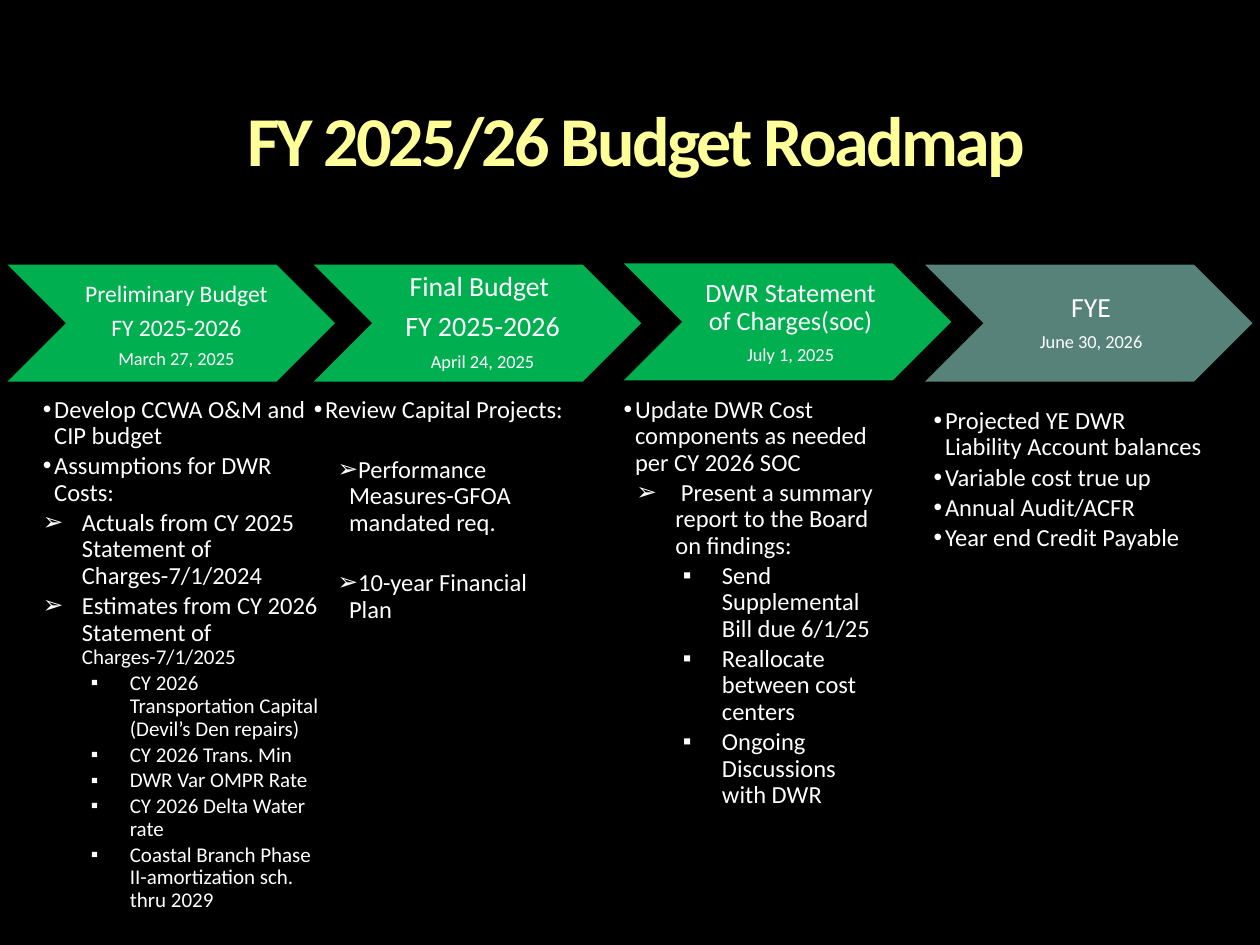
from lxml import etree
from pptx import Presentation
from pptx.dml.color import RGBColor
from pptx.enum.shapes import MSO_SHAPE
from pptx.enum.text import MSO_ANCHOR, MSO_AUTO_SIZE, PP_ALIGN
from pptx.oxml.ns import qn
from pptx.util import Inches, Pt

CHEVRON, RECTANGLE = MSO_SHAPE.CHEVRON, MSO_SHAPE.RECTANGLE
TOP, MIDDLE = MSO_ANCHOR.TOP, MSO_ANCHOR.MIDDLE
CENTER, LEFT = PP_ALIGN.CENTER, PP_ALIGN.LEFT
NO_AUTOFIT = MSO_AUTO_SIZE.NONE
GREEN, TEAL = "00B050", "578279"
CHEVRON_WIDTH, CHEVRON_HEIGHT = 2.6, 0.93
LINE_SPACING = 0.9

# Bullet styles: character, left margin, hanging indent, level
DOT = ("•", 0.09, 0.09, 0)
ARROW = ("➢", 0.31, 0.31, 0)
SQUARE = ("▪", 0.69, 0.31, 1)
SHORT_ARROW = ("➢", 0.28, 0.09, 2)
SUB_ARROW = ("➢", 0.41, 0.31, 1)
SUB_SQUARE = ("▪", 0.78, 0.31, 2)

# Chevron left, top and colour; label box; label lines as (text, size)
stages = [
    (0.06, 2.1, GREEN, (0.59, 2.22, 1.57, 0.73),
     [("Preliminary Budget ", 13.5), ("FY 2025-2026", 13.5), ("March 27, 2025", 10.5)]),
    (2.49, 2.1, GREEN, (2.98, 2.17, 1.65, 0.78),
     [("Final Budget ", 15.8), ("FY 2025-2026", 16), ("April 24, 2025", 10.5)]),
    (4.95, 2.09, GREEN, (5.47, 2.17, 1.56, 0.78),
     [("DWR Statement of Charges(soc)", 15), ("July 1, 2025", 10.5)]),
    (7.34, 2.1, TEAL, (7.8, 2.1, 1.67, 0.93),
     [(" FYE ", 15.8), ("June 30, 2026", 10.5)]),
]

# List box; items as (style, space before, runs of (text, size))
task_lists = [
    ((0.34, 3.15, 2.25, 2.63), [
        (DOT, 0, [("Develop CCWA O&M and CIP budget", 14)]),
        (DOT, 0, [("Assumptions for DWR Costs:", 14)]),
        (ARROW, 0, [("Actuals from CY 2025 Statement of Charges-7/1/2024", 14)]),
        (ARROW, 0, [("Estimates from CY 2026 Statement of ", 14), ("Charges-7/1/2025", 12)]),
        (SQUARE, 0, [("CY 2026 Transportation Capital (Devil’s Den repairs)", 12)]),
        (SQUARE, 0, [("CY 2026 Trans. Min", 12)]),
        (SQUARE, 0, [("DWR Var OMPR Rate", 12)]),
        (SQUARE, 0, [("CY 2026 Delta Water rate", 12)]),
        (SQUARE, 0, [("Coastal Branch Phase II-amortization sch. thru 2029", 12)]),
    ]),
    ((2.49, 3.15, 2.08, 2.26), [
        (DOT, 0, [("Review Capital Projects:", 14)]),
        (SHORT_ARROW, 17.2, [("Performance Measures-GFOA mandated req.", 14)]),
        (SHORT_ARROW, 17.2, [("10-year Financial Plan", 14)]),
    ]),
    ((4.95, 3.15, 2.05, 2.26), [
        (DOT, 0, [("Update DWR Cost components as needed per CY 2026 SOC", 14)]),
        (SUB_ARROW, 0, [(" Present a summary report to the Board on findings:", 14)]),
        (SUB_SQUARE, 0, [("Send Supplemental Bill due 6/1/25", 14)]),
        (SUB_SQUARE, 0, [("Reallocate between cost centers", 14)]),
        (SUB_SQUARE, 0, [("Ongoing Discussions with DWR", 14)]),
    ]),
    ((7.41, 3.24, 2.16, 2.63), [
        (DOT, 0, [("Projected YE DWR Liability Account balances", 14)]),
        (DOT, 0, [("Variable cost true up", 14)]),
        (DOT, 0, [("Annual Audit/ACFR", 14)]),
        (DOT, 0, [("Year end Credit Payable", 14)]),
    ]),
]


def set_font(font, size, color="FFFFFF", bold=False):
    font.name, font.size, font.bold = "Calibri", Pt(size), bold
    font.color.rgb = RGBColor.from_string(color)


def set_frame(shape, box, anchor, margins=(0, 0, 0, 0)):
    """Place the shape and return its text frame, wrapped and without autofit."""
    shape.left, shape.top, shape.width, shape.height = map(Inches, box)
    frame = shape.text_frame
    frame.word_wrap, frame.auto_size, frame.vertical_anchor = True, NO_AUTOFIT, anchor
    (frame.margin_left, frame.margin_top,
     frame.margin_right, frame.margin_bottom) = map(Inches, margins)
    return frame


presentation = Presentation()
presentation.slide_width, presentation.slide_height = Inches(10), Inches(7.5)
slide = presentation.slides.add_slide(presentation.slide_layouts.get_by_name("Comparison"))
slide.background.fill.solid()
slide.background.fill.fore_color.rgb = RGBColor.from_string("000000")

# Title
frame = set_frame(slide.shapes.title, (0.46, 0.84, 9.07, 0.61), TOP)
frame.text = " FY 2025/26 Budget Roadmap"
paragraph = frame.paragraphs[0]
paragraph.alignment, paragraph.line_spacing = CENTER, LINE_SPACING
run = paragraph.runs[0]
set_font(run.font, 40, "FFFF99", True)
run.font._element.set("spc", "-150")

# Chevrons with their labels
for left, top, color, label_box, lines in stages:
    chevron = slide.shapes.add_shape(
        CHEVRON, Inches(left), Inches(top), Inches(CHEVRON_WIDTH), Inches(CHEVRON_HEIGHT))
    label = slide.shapes.add_shape(RECTANGLE, *map(Inches, label_box))
    for shape in (chevron, label):
        shape.shadow.inherit = False
        shape.line.fill.background()
    chevron.fill.solid()
    chevron.fill.fore_color.rgb = RGBColor.from_string(color)
    label.fill.background()

    frame = set_frame(label, label_box, MIDDLE, (0.07, 0.02, 0.02, 0.02))
    frame.text = "\n".join(text for text, size in lines)
    for paragraph, (text, size) in zip(frame.paragraphs, lines):
        paragraph.alignment, paragraph.line_spacing = CENTER, LINE_SPACING
        paragraph.space_after = Pt(round(0.35 * size, 1))
        set_font(paragraph.runs[0].font, size)

# Task lists in the four body placeholders
bodies = [shape for shape in slide.placeholders if shape.placeholder_format.idx in (1, 2, 3, 4)]
for body, (box, items) in zip(bodies, task_lists):
    frame = set_frame(body, box, TOP)
    for index, ((bullet, margin, hanging, level), space_before, runs) in enumerate(items):
        paragraph = frame.add_paragraph() if index else frame.paragraphs[0]
        properties = paragraph._p.get_or_add_pPr()
        properties.set("marL", str(Inches(margin)))
        properties.set("indent", str(-Inches(hanging)))
        etree.SubElement(properties, qn("a:buFont")).set("typeface", "Arial")
        etree.SubElement(properties, qn("a:buChar")).set("char", bullet)
        paragraph.level, paragraph.alignment = level, LEFT
        paragraph.line_spacing = LINE_SPACING
        paragraph.space_before = Pt(space_before)
        paragraph.space_after = Pt(round(0.15 * runs[0][1], 1))
        for text, size in runs:
            run = paragraph.add_run()
            run.text = text
            set_font(run.font, size)

presentation.save("out.pptx")
